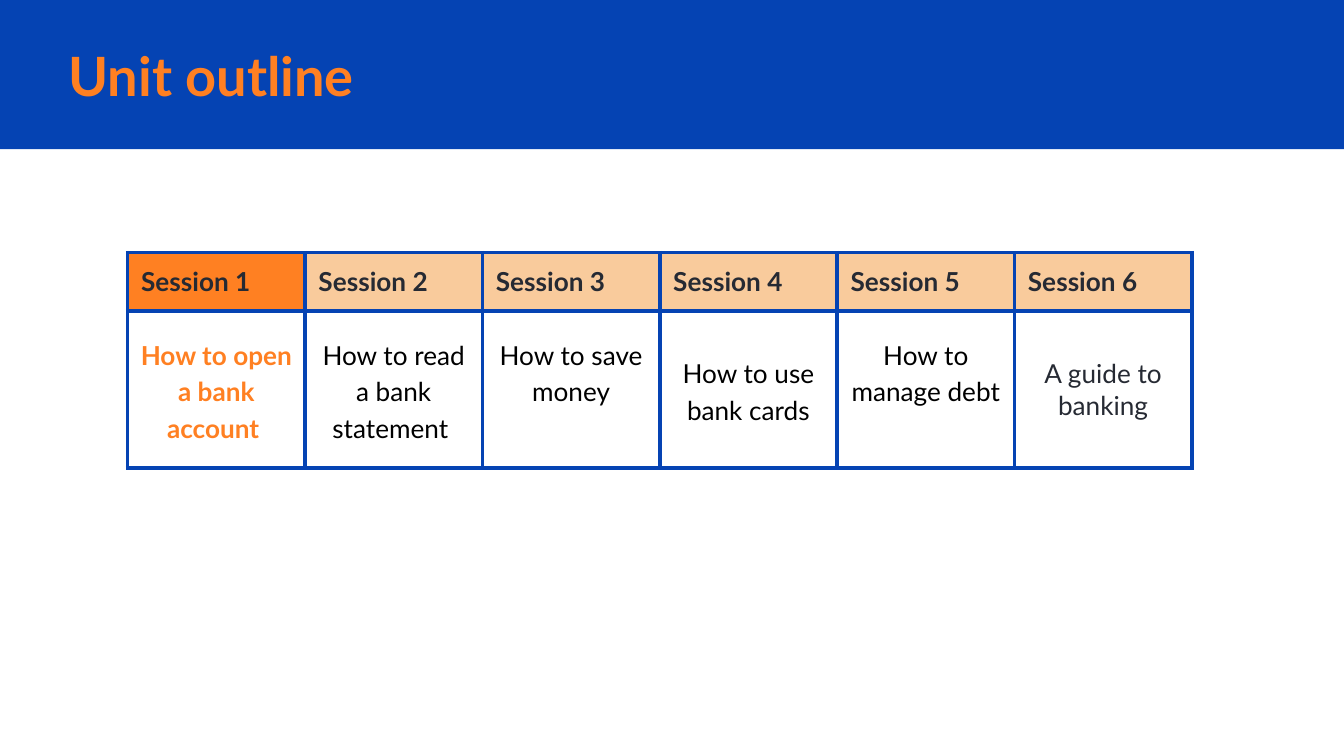
"""Build the unit outline slide with its table of six sessions."""
from dataclasses import dataclass

from lxml import etree
from pptx import Presentation
from pptx.dml.color import RGBColor
from pptx.enum.shapes import MSO_SHAPE
from pptx.enum.text import MSO_ANCHOR, MSO_AUTO_SIZE, PP_ALIGN
from pptx.oxml.ns import qn
from pptx.util import Inches, Pt

RECTANGLE = MSO_SHAPE.RECTANGLE
TOP, MIDDLE = MSO_ANCHOR.TOP, MSO_ANCHOR.MIDDLE
LEFT, CENTER = PP_ALIGN.LEFT, PP_ALIGN.CENTER
NO_AUTOFIT = MSO_AUTO_SIZE.NONE

FONT = "Lato"
TITLE_ONLY = 5
COLORS = {
    "blue": "0543B3",
    "orange": "FF8022",
    "peach": "F9CB9C",
    "ink": "262A33",
    "black": "000000",
}
PAGE_WIDTH = Inches(10)
PAGE_HEIGHT = PAGE_WIDTH * 9 // 16
BORDER_WIDTH = Pt(2.25)
COLUMN_WIDTH = 1.32
ROW_HEIGHTS = (0.42, 1.17)


@dataclass
class Session:
    topic: str
    header_fill: str = "peach"
    color: str = "black"
    bold: bool = False
    spacing: float = 1.15
    inset: float = 0.07
    bottom: float = 0.07


SESSIONS = [
    Session("How to open a bank account ", "orange", "orange", True),
    Session("How to read a bank statement "),
    Session("How to save money", bottom=0.34),
    Session("How to use bank cards"),
    Session("How to manage debt", bottom=0.34),
    Session("A guide to banking", color="ink", spacing=1.0, inset=0.1, bottom=0.1),
]


def rgb(name: str) -> RGBColor:
    return RGBColor.from_string(COLORS[name])


def style_text(frame, size: float, color: str, bold: bool, align) -> None:
    for para in frame.paragraphs:
        para.alignment = align
        for span in para.runs:
            span.font.name = FONT
            span.font.size = Pt(size)
            span.font.bold = bold
            span.font.color.rgb = rgb(color)


def set_insets(area, inset: float, bottom: float) -> None:
    area.margin_left = area.margin_right = area.margin_top = Inches(inset)
    area.margin_bottom = Inches(bottom)


def add_borders(cell) -> None:
    properties = cell._tc.get_or_add_tcPr()
    for index, side in enumerate(("lnL", "lnR", "lnT", "lnB")):
        line = etree.Element(qn(f"a:{side}"), w=str(BORDER_WIDTH))
        fill = etree.SubElement(line, qn("a:solidFill"))
        etree.SubElement(fill, qn("a:srgbClr"), val=COLORS["blue"])
        properties.insert(index, line)


def add_header(cell, number: int, session: Session) -> None:
    cell.text_frame.text = f"Session {number}"
    style_text(cell.text_frame, 14, "ink", True, LEFT)
    set_insets(cell, 0.1, 0.1)
    cell.vertical_anchor = TOP
    cell.fill.solid()
    cell.fill.fore_color.rgb = rgb(session.header_fill)
    add_borders(cell)


def add_topic(cell, session: Session) -> None:
    cell.text_frame.text = session.topic
    style_text(cell.text_frame, 14, session.color, session.bold, CENTER)
    cell.text_frame.paragraphs[0].line_spacing = session.spacing
    set_insets(cell, session.inset, session.bottom)
    cell.vertical_anchor = MIDDLE
    cell.fill.background()
    add_borders(cell)


def add_title_band(page) -> None:
    band = page.shapes.add_shape(RECTANGLE, 0, 0, PAGE_WIDTH, Inches(1.11))
    band.shadow.inherit = False
    band.fill.solid()
    band.fill.fore_color.rgb = rgb("blue")
    band.line.fill.background()

    title = page.shapes.title
    band.element.addnext(title.element)
    title.left, title.top = Inches(0.41), Inches(0.28)
    title.width, title.height = Inches(8.46), Inches(0.56)
    frame = title.text_frame
    frame.text = "Unit outline"
    frame.auto_size = NO_AUTOFIT
    frame.vertical_anchor = MIDDLE
    set_insets(frame, 0.1, 0.1)
    style_text(frame, 29, "orange", True, LEFT)


def add_session_table(page) -> None:
    table = page.shapes.add_table(
        len(ROW_HEIGHTS), len(SESSIONS), Inches(0.95), Inches(1.88),
        Inches(COLUMN_WIDTH * len(SESSIONS)), Inches(sum(ROW_HEIGHTS)),
    ).table
    table.first_row = table.horz_banding = False
    for row, height in zip(table.rows, ROW_HEIGHTS):
        row.height = Inches(height)
    for index, session in enumerate(SESSIONS):
        table.columns[index].width = Inches(COLUMN_WIDTH)
        add_header(table.cell(0, index), index + 1, session)
        add_topic(table.cell(1, index), session)


def main() -> None:
    deck = Presentation()
    deck.slide_width, deck.slide_height = PAGE_WIDTH, PAGE_HEIGHT
    page = deck.slides.add_slide(deck.slide_layouts[TITLE_ONLY])
    add_title_band(page)
    add_session_table(page)
    deck.save("out.pptx")


if __name__ == "__main__":
    main()
